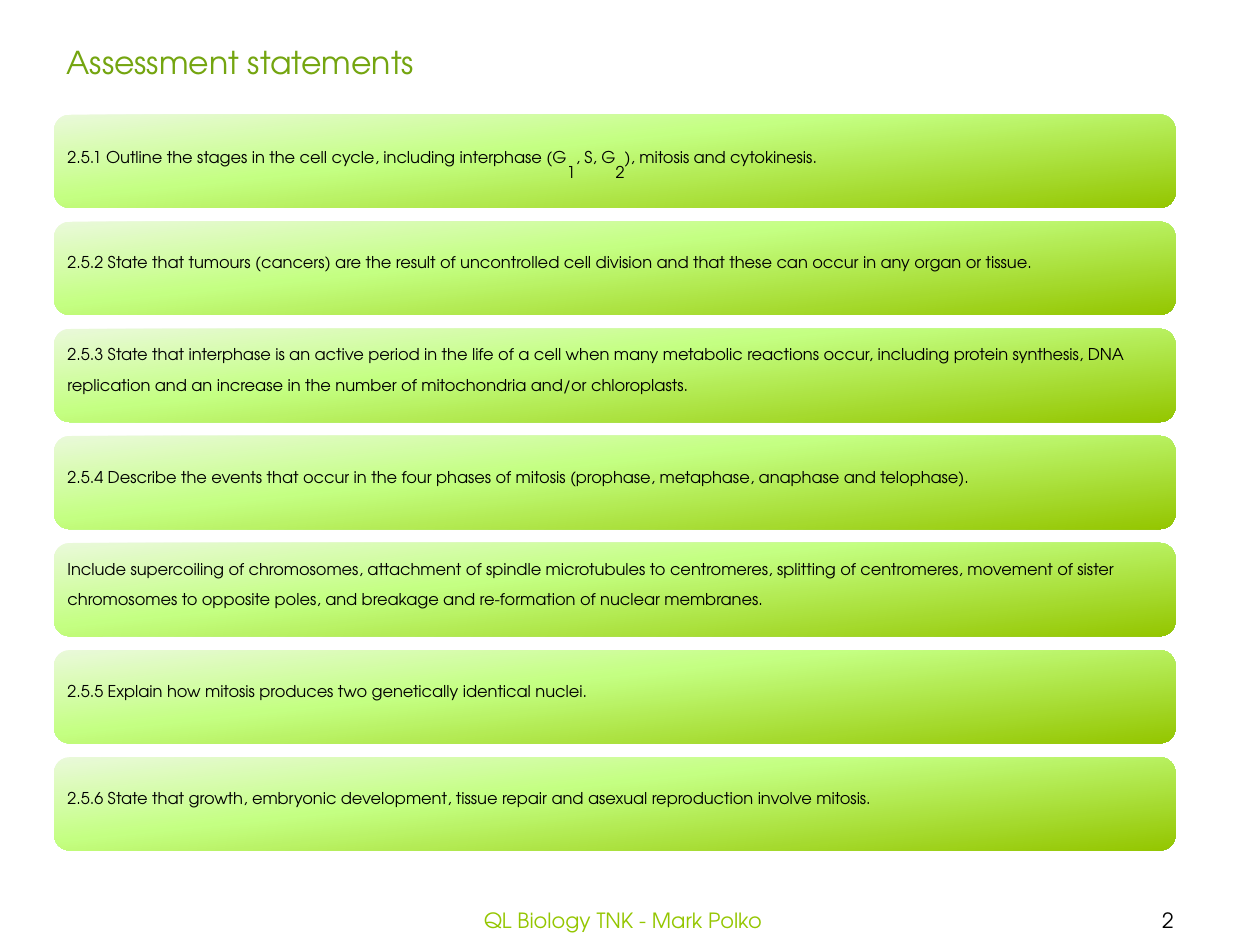
from lxml import etree
from pptx import Presentation
from pptx import util as u
from pptx.dml.color import RGBColor
from pptx.enum import shapes, text
from pptx.oxml.ns import qn

FONT = "TeX Gyre Adventor"
COLORS = {
    "title": "74A510",
    "footer": "94C600",
    "body": "000000",
    "pale": "EAF9DA",
    "light": "C4FF82",
    "deep": "94C600",
}
GRADIENT = [(0, "pale"), (40, "light"), (100, "deep")]
GRADIENT_ANGLE = 84
RAISED, LOWERED = 30, -25
STATEMENTS = [
    [
        ("2.5.1 Outline the stages in the cell cycle, including interphase (G", RAISED),
        ("1", LOWERED),
        (", S, G", RAISED),
        ("2", LOWERED),
        ("), mitosis and cytokinesis.", RAISED),
    ],
    [("2.5.2 State that tumours (cancers) are the result of uncontrolled cell division "
      "and that these can occur in any organ or tissue.", RAISED)],
    [("2.5.3 State that interphase is an active period in the life of a cell when many "
      "metabolic reactions occur, including protein synthesis, DNA replication and an "
      "increase in the number of mitochondria and/or chloroplasts.", RAISED)],
    [("2.5.4 Describe the events that occur in the four phases of mitosis (prophase, "
      "metaphase, anaphase and telophase).", RAISED)],
    [("Include supercoiling of chromosomes, attachment of spindle microtubules to "
      "centromeres, splitting of centromeres, movement of sister chromosomes to opposite "
      "poles, and breakage and re-formation of nuclear membranes.", RAISED)],
    [("2.5.5 Explain how mitosis produces two genetically identical nuclei.", RAISED)],
    [("2.5.6 State that growth, embryonic development, tissue repair and asexual "
      "reproduction involve mitosis.", RAISED)],
]
BAR_LEFT, BAR_TOP, BAR_WIDTH, BAR_HEIGHT = 0.43, 0.91, 8.9, 0.74
BAR_PITCH = 0.85


def add_span(para, words, size, color, baseline=0):
    span = para.add_run()
    span.text = words
    span.font.name = FONT
    span.font.size = u.Pt(size)
    span.font.color.rgb = RGBColor.from_string(COLORS[color])
    if baseline:
        span.font._element.set("baseline", str(baseline * 1000))


def add_label(page, area, words, size, color, align, anchor, wrap=True):
    box = page.shapes.add_textbox(*map(u.Inches, area))
    frame = box.text_frame
    frame.word_wrap = wrap
    frame.vertical_anchor = anchor
    para = frame.paragraphs[0]
    para.alignment = align
    add_span(para, words, size, color)
    return box


def fill_with_gradient(bar):
    bar.fill.gradient()
    gradient = bar._element.spPr.find(qn("a:gradFill"))
    stops = gradient.find(qn("a:gsLst"))
    for stop in list(stops):
        stops.remove(stop)
    for percent, color in GRADIENT:
        stop = etree.SubElement(stops, qn("a:gs"), pos=str(percent * 1000))
        etree.SubElement(stop, qn("a:srgbClr"), val=COLORS[color])
    direction = gradient.find(qn("a:lin"))
    direction.set("ang", str(GRADIENT_ANGLE * 60000))
    direction.set("scaled", "0")


def add_statement(page, top, spans):
    area = (BAR_LEFT, top, BAR_WIDTH, BAR_HEIGHT)
    bar = page.shapes.add_shape(shapes.MSO_SHAPE.ROUNDED_RECTANGLE, *map(u.Inches, area))
    bar.shadow.inherit = False
    bar.line.fill.background()
    fill_with_gradient(bar)
    frame = bar.text_frame
    frame.word_wrap = True
    frame.vertical_anchor = text.MSO_ANCHOR.MIDDLE
    frame.margin_left = frame.margin_right = u.Inches(0.07)
    frame.margin_top = frame.margin_bottom = u.Inches(0.07)
    para = frame.paragraphs[0]
    para.alignment = text.PP_ALIGN.LEFT
    para.line_spacing = 0.9
    para.space_after = u.Pt(5.6)
    for words, baseline in spans:
        add_span(para, words, 16, "body", baseline)


def main():
    deck = Presentation()
    deck.slide_width, deck.slide_height = u.Inches(10), u.Inches(7.5)
    page = deck.slides.add_slide(deck.slide_layouts[6])

    center, middle = text.PP_ALIGN.CENTER, text.MSO_ANCHOR.MIDDLE
    add_label(page, (8.54, 7.1, 1.46, 0.4), "2", 12, "body", center, middle)
    add_label(page, (3.03, 7.1, 3.83, 0.4), "QL Biology TNK - Mark Polko", 12, "footer",
              center, middle)
    for index, spans in enumerate(STATEMENTS):
        add_statement(page, BAR_TOP + index * BAR_PITCH, spans)
    title = add_label(page, (0.43, 0.29, 3, 0.4), "Assessment statements", 18, "title",
                      text.PP_ALIGN.LEFT, text.MSO_ANCHOR.TOP, wrap=False)
    title.text_frame.auto_size = text.MSO_AUTO_SIZE.SHAPE_TO_FIT_TEXT

    deck.save("out.pptx")


if __name__ == "__main__":
    main()
